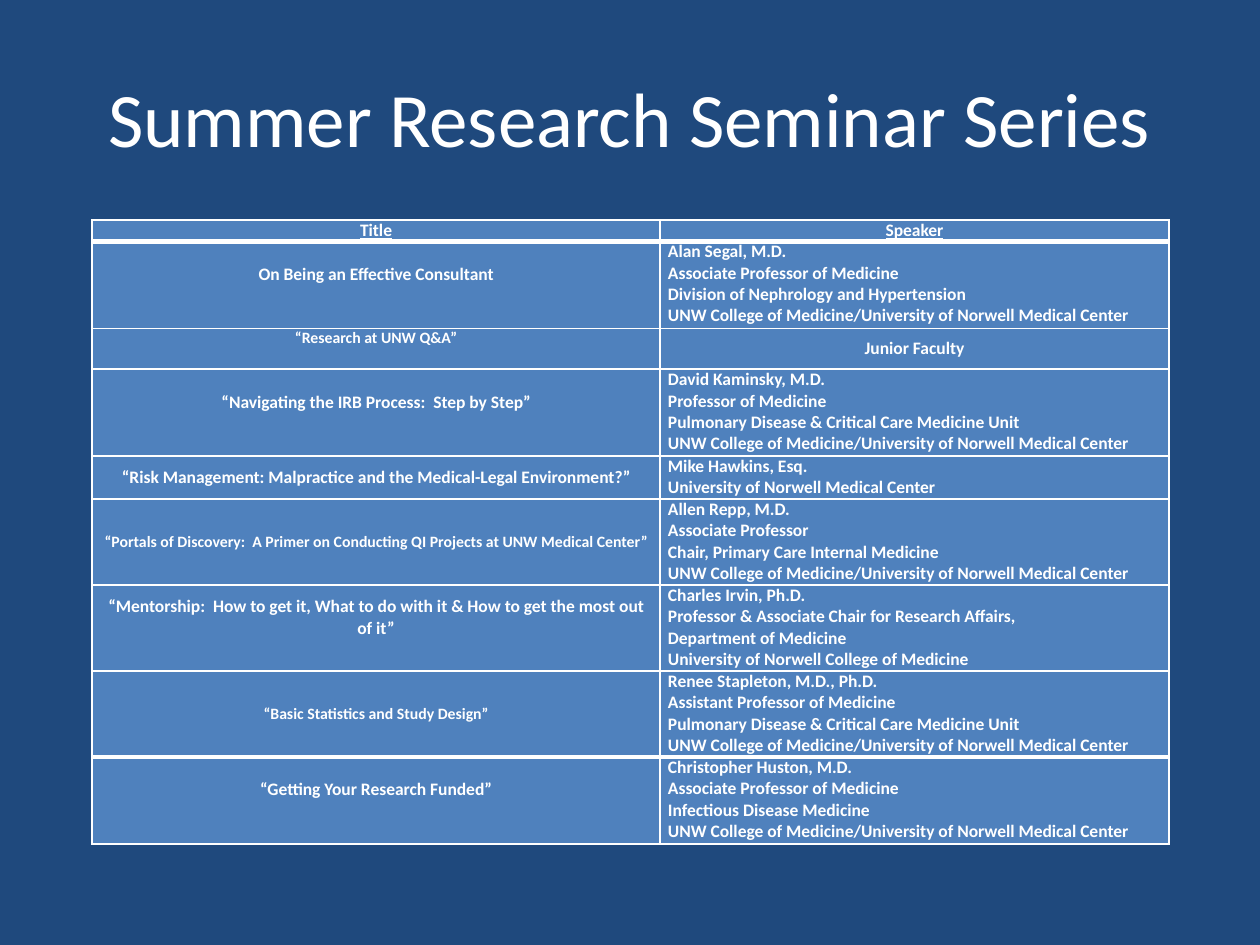
from lxml import etree
from pptx import Presentation
from pptx.dml.color import RGBColor
from pptx.enum.text import MSO_ANCHOR, PP_ALIGN
from pptx.oxml.ns import qn
from pptx.util import Pt

EMU_PER_PX = 914400 / 126
CENTER, LEFT = PP_ALIGN.CENTER, PP_ALIGN.LEFT
MIDDLE, TOP = MSO_ANCHOR.MIDDLE, MSO_ANCHOR.TOP
TITLE_ONLY = 5
COLORS = {"background": "1F497D", "cell": "4F81BD", "text": "FFFFFF", "border": "FFFFFF"}
FONT = "Calibri"
THIN, THICK = 1, 3
LINE_HEIGHT = 21  # one line of 10 pt text, in px

MEDICAL_CENTER = "UNW College of Medicine/University of Norwell Medical Center"
PULMONARY = "Pulmonary Disease & Critical Care Medicine Unit"

# Seminar title, its size in pt, whether it sits half a line high, row height, speaker lines
SEMINARS = [
    ("On Being an Effective Consultant", 10, True, 87,
     ["Alan Segal, M.D.", "Associate Professor of Medicine",
      "Division of Nephrology and Hypertension", MEDICAL_CENTER]),
    ("“Research at UNW Q&A”", 9, True, 41, ["Junior Faculty"]),
    ("“Navigating the IRB Process:  Step by Step”", 10, True, 87,
     ["David Kaminsky, M.D.", "Professor of Medicine", PULMONARY, MEDICAL_CENTER]),
    ("“Risk Management: Malpractice and the Medical-Legal Environment?”", 10, False, 43,
     ["Mike Hawkins, Esq.", "University of Norwell Medical Center"]),
    ("“Portals of Discovery:  A Primer on Conducting QI Projects at UNW Medical Center”",
     9, False, 86,
     ["Allen Repp, M.D.", "Associate Professor",
      "Chair, Primary Care Internal Medicine", MEDICAL_CENTER]),
    ("“Mentorship:  How to get it, What to do with it & How to get the most out of it”",
     10, True, 86,
     ["Charles Irvin, Ph.D.", "Professor & Associate Chair for Research Affairs,",
      "Department of Medicine", "University of Norwell College of Medicine"]),
    ("“Basic Statistics and Study Design”", 9, False, 86,
     ["Renee Stapleton, M.D., Ph.D.", "Assistant Professor of Medicine",
      PULMONARY, MEDICAL_CENTER]),
    ("“Getting Your Research Funded”", 10, True, 87,
     ["Christopher Huston, M.D.", "Associate Professor of Medicine",
      "Infectious Disease Medicine", MEDICAL_CENTER]),
]


def px(length):
    return round(length * EMU_PER_PX)


def rgb(name):
    return RGBColor.from_string(COLORS[name])


def write_lines(frame, lines, align, **font_format):
    for index, line in enumerate(lines):
        paragraph = frame.paragraphs[0] if index == 0 else frame.add_paragraph()
        paragraph.alignment = align
        run = paragraph.add_run()
        run.text = line
        run.font.color.rgb = rgb("text")
        for name, value in {"name": FONT, **font_format}.items():
            setattr(run.font, name, value)


def add_borders(cell, top, bottom):
    properties = cell._tc.get_or_add_tcPr()
    for side, width in {"L": THIN, "R": THIN, "T": top, "B": bottom}.items():
        line = etree.SubElement(properties, qn(f"a:ln{side}"), w=str(Pt(width)))
        fill = etree.SubElement(line, qn("a:solidFill"))
        etree.SubElement(fill, qn("a:srgbClr"), val=COLORS["border"])


def fill_cell(cell, lines, align, anchor, borders, size=10, underline=False, bottom=0):
    add_borders(cell, *borders)
    cell.fill.solid()
    cell.fill.fore_color.rgb = rgb("cell")
    cell_format = {"margin_left": px(8), "margin_right": px(8), "margin_top": 0,
                   "margin_bottom": px(bottom), "vertical_anchor": anchor}
    for name, value in cell_format.items():
        setattr(cell, name, value)
    write_lines(cell.text_frame, lines, align, size=Pt(size), bold=True, underline=underline)


def add_heading(slide, left, top, width, height):
    heading = slide.shapes.title
    box = {"left": left, "top": top, "width": width, "height": height}
    for name, value in box.items():
        setattr(heading, name, px(value))
    heading.text_frame.vertical_anchor = MIDDLE
    write_lines(heading.text_frame, ["Summer Research Seminar Series"], CENTER, size=Pt(44))


def add_schedule(slide, left, top, width, height):
    schedule = slide.shapes.add_table(
        len(SEMINARS) + 1, 2, px(left), px(top), px(width), px(height)).table
    schedule.first_row = schedule.horz_banding = False
    title_width = 568
    schedule.columns[0].width = px(title_width)
    schedule.columns[1].width = px(width - title_width)

    # Header row
    schedule.rows[0].height = px(LINE_HEIGHT)
    for column, (label, anchor) in enumerate([("Title", MIDDLE), ("Speaker", TOP)]):
        fill_cell(schedule.cell(0, column), [label], CENTER, anchor, (THIN, THICK),
                  underline=True)

    # One row per seminar, with thick rules under the header and above the last row
    last = len(SEMINARS)
    for row, (title, size, raised, row_height, speaker) in enumerate(SEMINARS, start=1):
        schedule.rows[row].height = px(row_height)
        borders = (THICK if row in (1, last) else THIN, THICK if row == last - 1 else THIN)
        fill_cell(schedule.cell(row, 0), [title], CENTER, MIDDLE, borders, size=size,
                  bottom=LINE_HEIGHT if raised else 0)
        align, anchor = (CENTER, MIDDLE) if len(speaker) == 1 else (LEFT, TOP)
        fill_cell(schedule.cell(row, 1), speaker, align, anchor, borders)


def main():
    presentation = Presentation()
    presentation.slide_width, presentation.slide_height = px(1260), px(945)
    slide = presentation.slides.add_slide(presentation.slide_layouts[TITLE_ONLY])
    slide.background.fill.solid()
    slide.background.fill.fore_color.rgb = rgb("background")
    add_heading(slide, 63, 38, 1134, 158)
    add_schedule(slide, 92, 220, 1077, 624)
    presentation.save("out.pptx")


if __name__ == "__main__":
    main()
